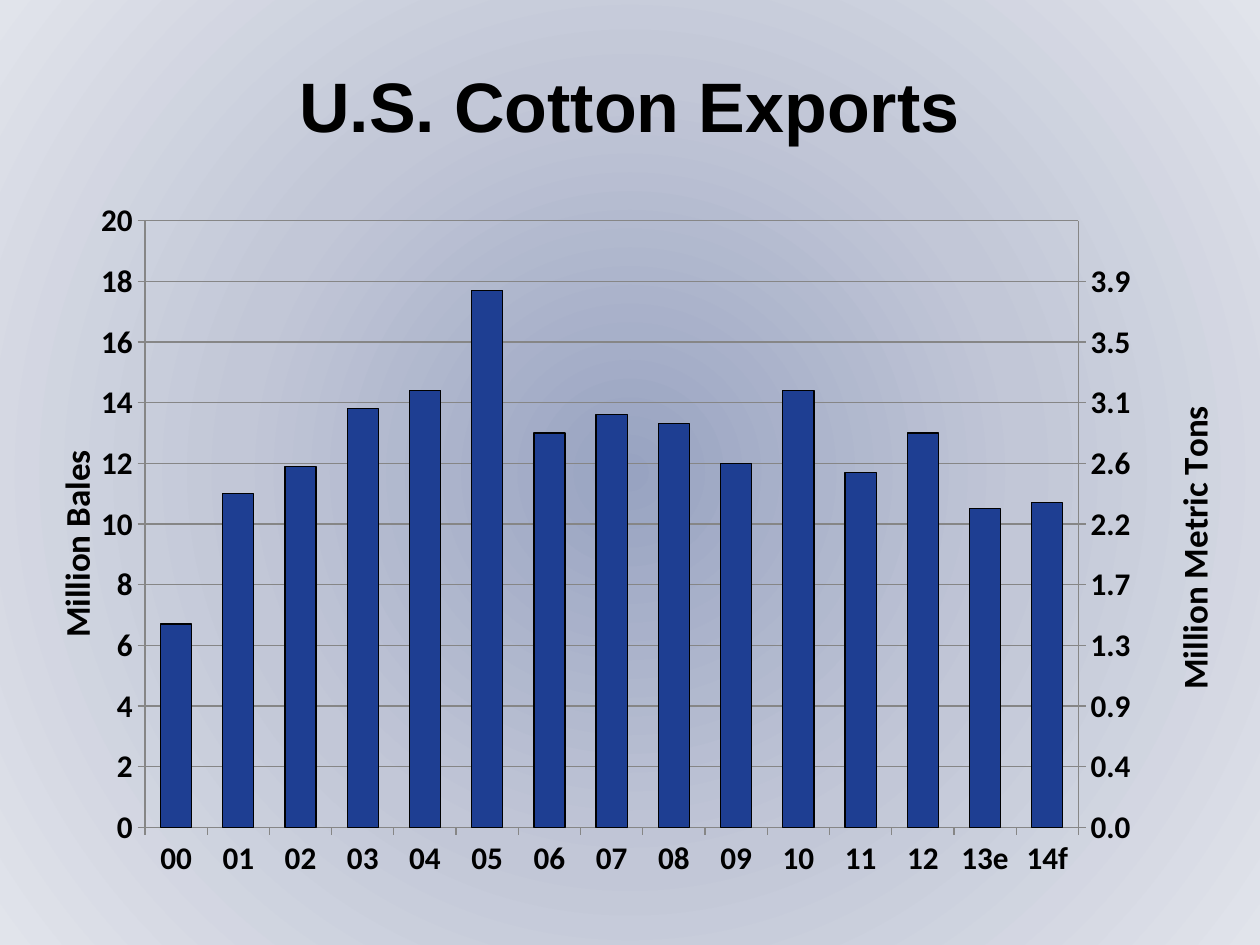
from copy import deepcopy

from pptx import Presentation
from pptx.chart.data import CategoryChartData
from pptx.dml.color import RGBColor
from pptx.enum.chart import XL_CHART_TYPE, XL_TICK_LABEL_POSITION, XL_TICK_MARK
from pptx.enum.text import MSO_ANCHOR, PP_ALIGN
from pptx.oxml import parse_xml
from pptx.oxml.ns import nsdecls
from pptx.util import Inches, Pt

COLORS = {
    "text": "000000",
    "bar": "1E3E92",
    "axis": "868686",
    "center": "98A3C1",
    "middle": "C2C7D7",
    "edge": "E1E4EB",
}
YEARS = [f"{year:02d}" for year in range(13)] + ["13e", "14f"]
BALES = [6.7, 11, 11.9, 13.8, 14.4, 17.7, 13, 13.6, 13.3, 12, 14.4, 11.7, 13, 10.5, 10.7]
TONS = [1.5, 2.4, 2.6, 3, 3.1, 3.9, 2.8, 3, 2.9, 2.6, 3.1, 2.6, 2.8, 2.3, 2.3]
MAX_BALES, STEP_BALES = 20, 2
MAX_TONS = 4.357298  # 20 million bales in metric tons


def rgb(name):
    return RGBColor.from_string(COLORS[name])


def write_text(tf, text, size, font, color="text", bold=True, align=PP_ALIGN.CENTER):
    p = tf.paragraphs[0]
    p.alignment = align
    r = p.add_run()
    r.text = text
    r.font.size, r.font.name, r.font.bold = Pt(size), font, bold
    r.font.color.rgb = rgb(color)


def set_background(slide):
    stops = "".join(
        f'<a:gs pos="{pos}"><a:srgbClr val="{COLORS[name]}"/></a:gs>'
        for pos, name in ((0, "center"), (50000, "middle"), (100000, "edge")))
    slide.element.cSld.insert(0, parse_xml(
        f'<p:bg {nsdecls("p", "a")}><p:bgPr><a:gradFill><a:gsLst>{stops}</a:gsLst>'
        '<a:path path="circle"><a:fillToRect l="50000" t="50000" r="50000" b="50000"/></a:path>'
        '</a:gradFill><a:effectLst/></p:bgPr></p:bg>'))


def add_title(slide, text):
    sp = slide.shapes.add_textbox(Inches(0.25), Inches(0.33), Inches(9.49), Inches(1))
    tf = sp.text_frame
    tf.word_wrap = True
    tf.vertical_anchor = MSO_ANCHOR.MIDDLE
    write_text(tf, text, 40, "Arial")


def set_layout(parent, index, target=None, **fractions):
    """Place a chart part by fractions of the chart's size."""
    for old in parent.xpath("c:layout"):
        parent.remove(old)
    inner = f'<c:layoutTarget val="{target}"/>' if target else ""
    inner += "".join(f'<c:{k}Mode val="edge"/>' for k in "xy")
    inner += "".join(f'<c:{k} val="{v}"/>' for k, v in fractions.items())
    parent.insert(index, parse_xml(
        f'<c:layout {nsdecls("c")}><c:manualLayout>{inner}</c:manualLayout></c:layout>'))


def set_values(element, **values):
    for tag, value in values.items():
        for child in element.xpath(f".//c:{tag}"):
            child.set("val", str(value))


def style_axis(axis):
    axis.major_tick_mark = XL_TICK_MARK.OUTSIDE
    axis.minor_tick_mark = XL_TICK_MARK.NONE
    axis.format.line.color.rgb = rgb("axis")
    axis.format.line.width = Pt(0.75)


def style_value_axis(axis, title):
    style_axis(axis)
    axis.minimum_scale, axis.maximum_scale, axis.major_unit = 0, MAX_BALES, STEP_BALES
    axis.tick_labels.number_format = "#,##0"
    axis.tick_labels.number_format_is_linked = False
    axis.has_major_gridlines = True
    axis.major_gridlines.format.line.color.rgb = rgb("axis")
    axis.major_gridlines.format.line.width = Pt(0.75)
    tf = axis.axis_title.text_frame
    write_text(tf, title, 20, "Calibri")
    body = axis.axis_title.element.xpath(".//a:bodyPr")[0]
    body.set("rot", "-5400000")
    body.set("vert", "horz")
    set_layout(axis.axis_title.element, 1, x=0.012, y=0.39)


def add_right_axis(chart, title):
    """Move the second series to its own bar group and axes."""
    plot_area = chart.element.xpath(".//c:plotArea")[0]
    bars, cat_ax, val_ax = (plot_area.xpath(f"c:{tag}")[0] for tag in ("barChart", "catAx", "valAx"))
    bars2, cat_ax2, val_ax2 = (deepcopy(e) for e in (bars, cat_ax, val_ax))
    bars.remove(bars.xpath("c:ser")[1])
    bars2.remove(bars2.xpath("c:ser")[0])
    for axis_id, value in zip(bars2.xpath("c:axId"), ("5001", "5002")):
        axis_id.set("val", value)

    set_values(cat_ax2, axId=5001, crossAx=5002, delete=1)
    set_values(val_ax2, axId=5002, crossAx=5001, axPos="r", crosses="max",
               max=MAX_TONS, majorUnit=round(MAX_TONS * STEP_BALES / MAX_BALES, 5))
    val_ax2.remove(val_ax2.xpath("c:majorGridlines")[0])
    val_ax2.xpath("c:numFmt")[0].set("formatCode", "#,##0.0")
    val_ax2.xpath(".//a:t")[0].text = title
    set_layout(val_ax2.xpath("c:title")[0], 1, x=0.958, y=0.33)
    bars.addnext(bars2)
    val_ax.addnext(val_ax2)
    val_ax2.addnext(cat_ax2)


def add_exports_chart(slide):
    data = CategoryChartData()
    data.categories = YEARS
    data.add_series("Series 1", BALES)
    data.add_series("Series 2", TONS)
    chart = slide.shapes.add_chart(
        XL_CHART_TYPE.COLUMN_CLUSTERED, Inches(0.25), Inches(1.17),
        Inches(9.49), Inches(5.99), data).chart
    chart.has_legend = False
    chart.has_title = False
    chart.font.size, chart.font.name, chart.font.bold = Pt(18), "Calibri", True
    chart.font.color.rgb = rgb("text")

    # Visible bars in bales, unfilled bars in tons
    plot = chart.plots[0]
    plot.gap_width = 100
    plot.vary_by_categories = False
    bales, tons = plot.series
    bales.format.fill.solid()
    bales.format.fill.fore_color.rgb = rgb("bar")
    bales.format.line.color.rgb = rgb("text")
    bales.format.line.width = Pt(0.75)
    tons.format.fill.background()
    tons.format.line.fill.background()

    # Axes
    style_axis(chart.category_axis)
    chart.category_axis.tick_label_position = XL_TICK_LABEL_POSITION.LOW
    style_value_axis(chart.value_axis, "Million Bales")
    add_right_axis(chart, "Million Metric Tons")
    set_layout(chart.element.xpath(".//c:plotArea")[0], 0, "inner",
               x=0.096, y=0.097, w=0.79, h=0.804)


def main():
    prs = Presentation()
    prs.slide_width, prs.slide_height = Inches(10), Inches(7.5)
    slide = prs.slides.add_slide(prs.slide_layouts[6])
    set_background(slide)
    add_title(slide, "U.S. Cotton Exports")
    add_exports_chart(slide)
    prs.save("out.pptx")


if __name__ == "__main__":
    main()
